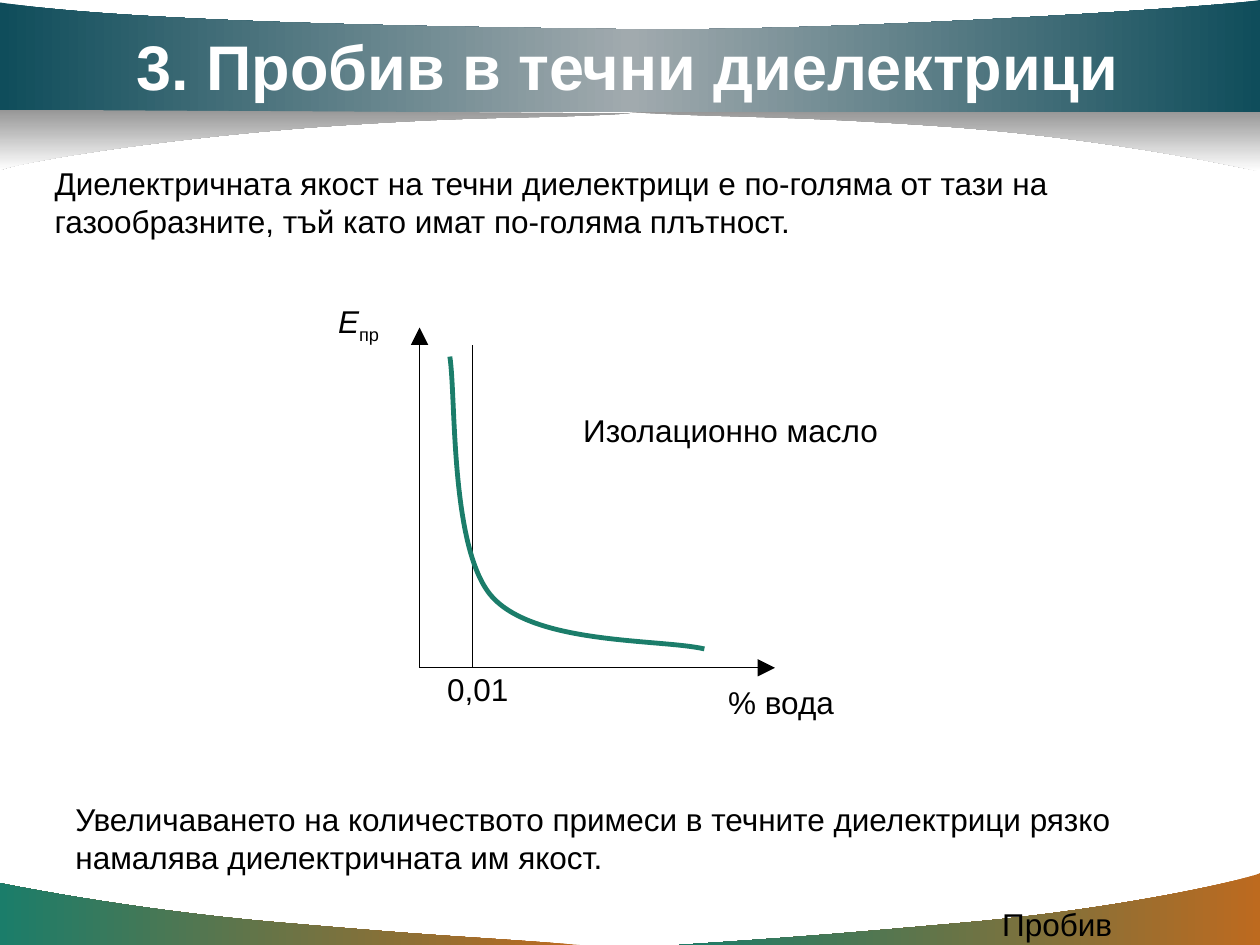
from copy import deepcopy
from lxml.etree import Element, SubElement
from pptx import Presentation
from pptx.dml.color import RGBColor
from pptx.enum.shapes import MSO_CONNECTOR
from pptx.enum.text import MSO_ANCHOR, MSO_AUTO_SIZE, PP_ALIGN
from pptx.oxml.ns import qn
from pptx.util import Inches, Pt

COLS, ROWS = 100, 75
CELL = Inches(0.1)
BODY = {"name": "Arial", "size": Pt(18), "bold": False, "italic": False}
TITLE = {**BODY, "size": Pt(36), "bold": True}
BLACK, WHITE, GREEN, ORANGE = "000000", "FFFFFF", "1B7D6A", "BD6A1F"
TEAL, SILVER, GREY = "0F4D5B", "A1AAAE", "969696"


def grid(*cells):
    return [round(c * CELL) for c in cells]


def rgb(color):
    return RGBColor.from_string(color)


def add_outline(s, start, segments, close):
    points = [tuple(grid(*seg[i:i + 2]))
              for seg in segments for i in range(0, len(seg), 2)]
    builder = s.shapes.build_freeform(*grid(*start), scale=1.0)
    builder.add_line_segments(points, close=close)
    sp = builder.convert_to_shape()
    sp.shadow.inherit = False
    steps = iter(list(sp._element.spPr.iter(qn("a:lnTo"))))
    for seg in segments:
        nodes = [next(steps) for _ in range(len(seg) // 2)]
        if len(nodes) == 3:
            curve = Element(qn("a:cubicBezTo"))
            nodes[0].addprevious(curve)
            for node in nodes:
                curve.append(node[0])
                node.getparent().remove(node)
    return sp


def add_band(s, colors, angle, start, *segments):
    sp = add_outline(s, start, (*segments, start), True)
    sp.line.fill.background()
    fill = sp.fill
    fill.gradient()
    fill.gradient_angle = angle
    stops = next(sp._element.spPr.iter(qn("a:gsLst")))
    for _ in colors[2:]:
        stops.append(deepcopy(stops[-1]))
    for i, (stop, color) in enumerate(zip(fill.gradient_stops, colors)):
        stop.position = i / (len(colors) - 1)
        stop.color.rgb = rgb(color)


def add_curve(s, color, width, start, *segments):
    sp = add_outline(s, start, segments, False)
    sp.fill.background()
    sp.line.color.rgb = rgb(color)
    sp.line.width = Pt(width)


def add_line(s, start, end, arrow=False):
    cxn = s.shapes.add_connector(MSO_CONNECTOR.STRAIGHT, *grid(*start, *end))
    cxn.line.color.rgb = rgb(BLACK)
    cxn.line.width = Pt(0.75)
    SubElement(cxn._element.spPr, qn("a:effectLst"))
    if arrow:
        SubElement(cxn.line._get_or_add_ln(), qn("a:tailEnd"),
                   type="triangle", w="lg", len="lg")


def add_run(p, text, fmt, color, baseline=None):
    r = p.add_run()
    r.text = text
    for key, value in fmt.items():
        setattr(r.font, key, value)
    r.font.color.rgb = rgb(color)
    if baseline:
        r._r.get_or_add_rPr().set("baseline", str(baseline * 1000))


def add_text(s, box, text, wrap=True):
    tf = s.shapes.add_textbox(*grid(*box)).text_frame
    tf.word_wrap = wrap
    p = tf.paragraphs[0]
    add_run(p, text, BODY, BLACK)
    return p


def set_title(s, box, text):
    sp = s.shapes.title
    sp.left, sp.top, sp.width, sp.height = grid(*box)
    tf = sp.text_frame
    for key, value in {"word_wrap": True, "auto_size": MSO_AUTO_SIZE.NONE,
                       "vertical_anchor": MSO_ANCHOR.MIDDLE}.items():
        setattr(tf, key, value)
    p = tf.paragraphs[0]
    p.alignment = PP_ALIGN.CENTER
    add_run(p, text, TITLE, WHITE)
    s.shapes._spTree.append(sp._element)


def add_background(s):
    corner = (ORANGE, GREEN)
    add_band(s, corner, 180, (46, ROWS),
             (38.4, 74.4, 35.8, 74.4, 23.2, 73.3),
             (10.6, 72.3, 0.1, 70.1, 0, 70.1), (0, ROWS))
    add_band(s, corner, 180, (53.9, ROWS),
             (61.4, 74.5, 64.6, 74.3, 76.9, 73.2),
             (89.2, 72.1, 99, 69.8, COLS, 69.3), (COLS, ROWS))
    shade = (GREY, WHITE)
    add_band(s, shade, 270, (50, 8.9),
             (58.4, 9.4, 62, 9.1, 75.8, 10.1),
             (89.7, 11.2, 99.8, 13.6, COLS, 13.6), (COLS, 8.8))
    add_band(s, (TEAL, SILVER, TEAL), 180, (0, 8.9), (COLS, 8.9), (COLS, 0),
             (96.4, 0.6, 65.3, 2.6, 48.7, 2.3),
             (32.1, 2.1, 10.1, 1.7, 0, 0.2))
    add_band(s, shade, 270, (50, 9),
             (41.6, 9.5, 38.8, 9.1, 24.9, 10.1),
             (11, 11.2, 1.1, 13, 0, 13.5), (0, 8.7))


def add_mark(s):
    g = s.shapes.add_group_shape()
    add_line(g, (37.5, 27.4), (37.5, 52.9))
    add_text(g, (34.5, 52.7, 6.9, 4), "0,01", wrap=False)


def add_graph(s):
    g = s.shapes.add_group_shape()
    origin = (33.3, 53)
    add_line(g, origin, (61.5, 53), arrow=True)
    add_line(g, origin, (33.3, 26), arrow=True)
    add_text(g, (56.8, 53.7, 10.5, 4), "% вода", wrap=False)
    p = add_text(g, (25.85, 23.5, 5.5, 4), "E", wrap=False)
    p.runs[0].font.italic = True
    add_run(p, "пр", BODY, BLACK, baseline=-25)
    add_curve(g, GREEN, 2.75, (35.7, 28.3),
              (36.2, 31.5, 35.7, 43.5, 39, 47.3),
              (42.4, 51.2, 52.4, 50.7, 55.9, 51.5))
    add_text(g, (45.3, 32.1, 25.5, 4), "Изолационно масло", wrap=False)


def main():
    prs = Presentation()
    prs.slide_width, prs.slide_height = grid(COLS, ROWS)
    s = prs.slides.add_slide(prs.slide_layouts[5])
    add_background(s)
    add_text(s, (78.55, 71.36, 20.8, 2.5), "Пробив")
    set_title(s, (9.75, 1.7, 80.2, 7), "3. Пробив в течни диелектрици")
    add_text(s, (3.35, 12.54, 94.2, 7),
             "Диелектричната якост на течни диелектрици е по-голяма от тази на "
             "газообразните, тъй като имат по-голяма плътност.")
    add_mark(s)
    add_text(s, (5, 63, 94.2, 7),
             "Увеличаването на количеството примеси в течните диелектрици рязко "
             "намалява диелектричната им якост.")
    add_graph(s)
    prs.save("out.pptx")


if __name__ == "__main__":
    main()
